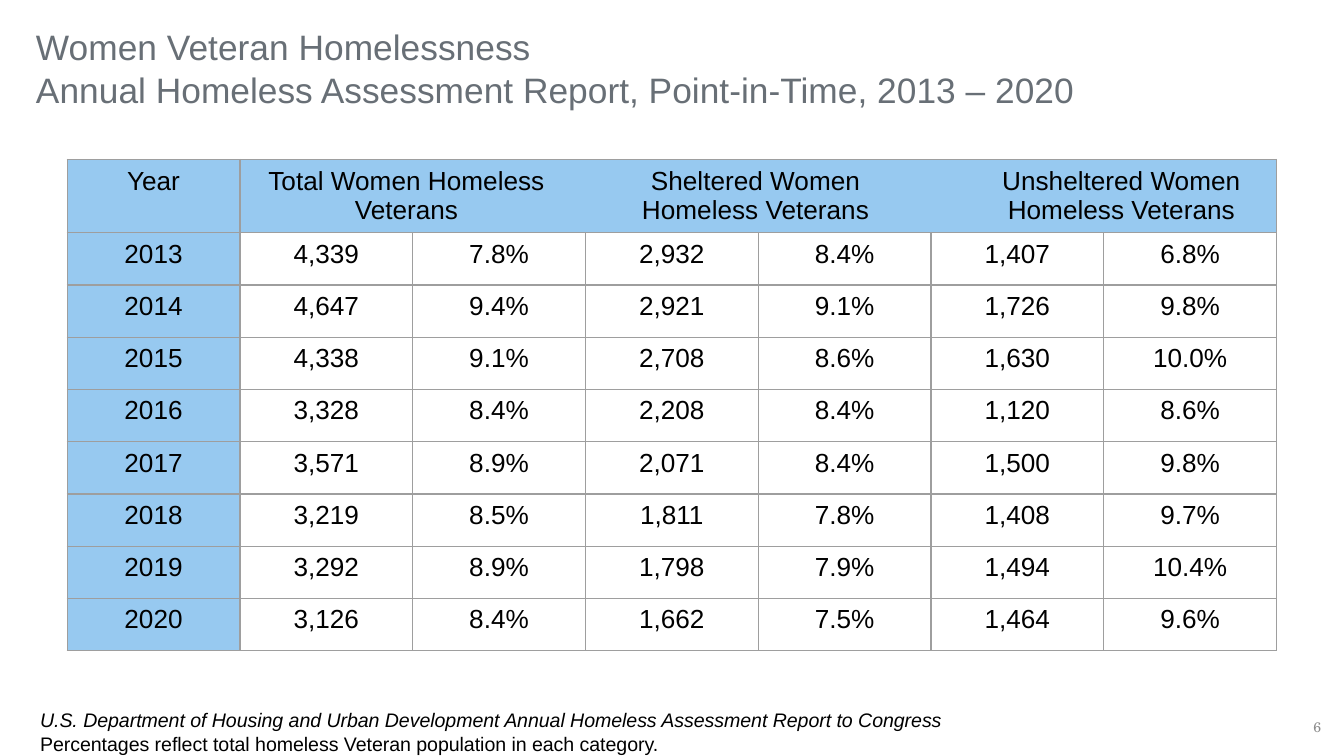
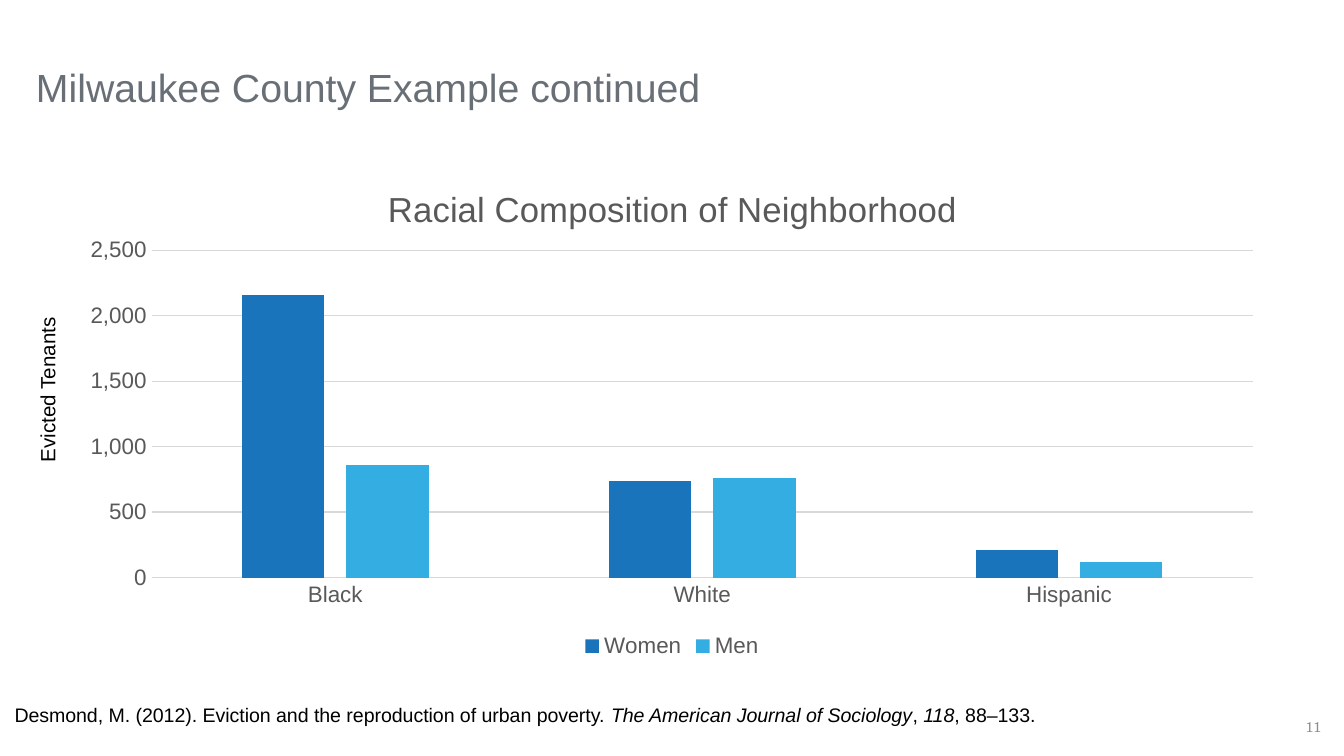
"""Build two slides on women veteran homelessness and neighborhood evictions."""
import dataclasses
import typing

import lxml.etree
import pptx
import pptx.chart.data
import pptx.dml.color
import pptx.enum.chart
import pptx.enum.text
import pptx.oxml.ns
import pptx.slide
import pptx.util

Pt = pptx.util.Pt
qn = pptx.oxml.ns.qn
Align = pptx.enum.text.PP_ALIGN
Anchor = pptx.enum.text.MSO_ANCHOR


@dataclasses.dataclass(frozen=True)
class Theme:
    sans: str = "Arial"
    serif: str = "TeX Gyre Schola"
    ink: str = "000000"
    heading: str = "686F76"
    page: str = "8C8C8C"
    header_fill: str = "97C9F0"
    border: str = "9E9E9E"
    chart_text: str = "595959"
    grid: str = "D9D9D9"
    women: str = "1A74BB"
    men: str = "33ADE2"
    line_width: float = 0.75
    table_size: float = 14
    chart_title_size: float = 18.6
    chart_size: float = 12
    axis_title_size: float = 11
    note_size: float = 10.5
    page_size: float = 7.5


THEME = Theme()


class Box(typing.NamedTuple):
    left: float
    top: float
    width: float
    height: float


class Style(typing.NamedTuple):
    size: float
    color: str = THEME.ink
    face: str = THEME.sans
    align: Align = Align.LEFT
    anchor: Anchor = Anchor.TOP


class Span(typing.NamedTuple):
    text: str
    italic: bool = False


class Series(typing.NamedTuple):
    name: str
    values: tuple[int, ...]
    color: str


Line = tuple[Span, ...]

CONTENT = Box(36, 85.5, 648, 270)
PAGE_NUMBER = Box(684.7, 378.7, 30.2, 21.6)
NOTE_STYLE = Style(THEME.note_size)
CELL_STYLE = Style(THEME.table_size, align=Align.CENTER)

HEADER_ROW = 38.2
YEAR_ROW = 28
HEADER_STOPS = (82, 269, 465)
HEADER_LINES = (
    ("Total Women Homeless", "Sheltered Women", "Unsheltered Women"),
    ("Veterans", "Homeless Veterans", "Homeless Veterans"),
)
YEARS = (
    ("2013", "4,339", "7.8%", "2,932", "8.4%", "1,407", "6.8%"),
    ("2014", "4,647", "9.4%", "2,921", "9.1%", "1,726", "9.8%"),
    ("2015", "4,338", "9.1%", "2,708", "8.6%", "1,630", "10.0%"),
    ("2016", "3,328", "8.4%", "2,208", "8.4%", "1,120", "8.6%"),
    ("2017", "3,571", "8.9%", "2,071", "8.4%", "1,500", "9.8%"),
    ("2018", "3,219", "8.5%", "1,811", "7.8%", "1,408", "9.7%"),
    ("2019", "3,292", "8.9%", "1,798", "7.9%", "1,494", "10.4%"),
    ("2020", "3,126", "8.4%", "1,662", "7.5%", "1,464", "9.6%"),
)
NEIGHBORHOODS = ("Black", "White", "Hispanic")
TENANTS = (
    Series("Women", (2160, 740, 210), THEME.women),
    Series("Men", (860, 760, 120), THEME.men),
)


def rgb(color: str) -> pptx.dml.color.RGBColor:
    """Turn a hex string into a colour."""
    return pptx.dml.color.RGBColor.from_string(color)


def set_font(font: typing.Any, size: float, color: str, face: str = THEME.sans) -> None:
    """Give a font its size, colour and face."""
    font.size, font.name = Pt(size), face
    font.color.rgb = rgb(color)


def style_paragraph(paragraph: typing.Any, style: Style) -> None:
    """Apply alignment and font to a whole paragraph."""
    paragraph.alignment = style.align
    set_font(paragraph.font, style.size, style.color, style.face)


def add_text(slide: pptx.slide.Slide, box: Box, lines: tuple[Line, ...],
             style: Style, rotation: float = 0) -> None:
    """Draw a text box with one paragraph per line."""
    shape = slide.shapes.add_textbox(*map(Pt, box))
    shape.rotation = rotation
    frame = shape.text_frame
    frame.word_wrap = True
    frame.vertical_anchor = style.anchor
    for index, line in enumerate(lines):
        paragraph = frame.add_paragraph() if index else frame.paragraphs[0]
        style_paragraph(paragraph, style)
        uniform = len({span.italic for span in line}) == 1
        if uniform:
            paragraph.font.italic = line[0].italic
        for span in line:
            run = paragraph.add_run()
            run.text = span.text
            if not uniform:
                run.font.italic = span.italic


def add_page(deck: typing.Any, title: tuple[str, ...], title_size: float,
             number: int) -> pptx.slide.Slide:
    """Add a blank slide with its title and page number."""
    slide = deck.slides.add_slide(deck.slide_layouts[6])
    frame = slide.shapes.add_textbox(*map(Pt, (12.2, 4.3, 589, 58.3))).text_frame
    frame.word_wrap = True
    frame.vertical_anchor = Anchor.BOTTOM
    heading = frame.paragraphs[0]
    style_paragraph(heading, Style(title_size, THEME.heading))
    for index, text in enumerate(title):
        if index:
            heading.add_line_break()
        heading.add_run().text = text
    page_style = Style(THEME.page_size, THEME.page, THEME.serif, Align.RIGHT, Anchor.MIDDLE)
    add_text(slide, PAGE_NUMBER, ((Span(str(number)),),), page_style)
    return slide


def style_cell(cell: typing.Any, fill: str | None) -> None:
    """Draw the borders of a cell, then its fill."""
    properties = cell._tc.get_or_add_tcPr()
    for side in ("a:lnL", "a:lnR", "a:lnT", "a:lnB"):
        line = lxml.etree.SubElement(properties, qn(side), w=str(Pt(THEME.line_width)))
        solid = lxml.etree.SubElement(line, qn("a:solidFill"))
        lxml.etree.SubElement(solid, qn("a:srgbClr"), val=THEME.border)
    if fill:
        cell.fill.solid()
        cell.fill.fore_color.rgb = rgb(fill)
    else:
        cell.fill.background()


def fill_group_header(cell: typing.Any) -> None:
    """Centre the three group names on tab stops in the merged header."""
    frame = cell.text_frame
    for index, names in enumerate(HEADER_LINES):
        paragraph = frame.add_paragraph() if index else frame.paragraphs[0]
        stops = lxml.etree.SubElement(paragraph._p.get_or_add_pPr(), qn("a:tabLst"))
        for stop in HEADER_STOPS:
            lxml.etree.SubElement(stops, qn("a:tab"), pos=str(Pt(stop)), algn="ctr")
        paragraph.add_run().text = "".join(f"\t{name}" for name in names)
        style_paragraph(paragraph, CELL_STYLE._replace(align=Align.LEFT))


def add_homeless_table(slide: pptx.slide.Slide) -> None:
    """Draw the yearly counts and shares."""
    columns = len(YEARS[0])
    height = HEADER_ROW + YEAR_ROW * len(YEARS)
    table = slide.shapes.add_table(
        len(YEARS) + 1, columns, *map(Pt, CONTENT._replace(height=height))).table
    table.first_row = table.horz_banding = False
    for column in table.columns:
        column.width = Pt(CONTENT.width / columns)
    rows = (("Year",) + ("",) * (columns - 1),) + YEARS
    for row_index, texts in enumerate(rows):
        table.rows[row_index].height = Pt(YEAR_ROW if row_index else HEADER_ROW)
        for column_index, text in enumerate(texts):
            cell = table.cell(row_index, column_index)
            is_header = row_index == 0 or column_index == 0
            style_cell(cell, THEME.header_fill if is_header else None)
            if row_index == 0:
                cell.margin_bottom = Pt(2)
            if text:
                cell.text = text
                style_paragraph(cell.text_frame.paragraphs[0], CELL_STYLE)
    groups = table.cell(0, 1)
    groups.merge(table.cell(0, columns - 1))
    fill_group_header(groups)


def place(part: typing.Any, index: int, **fractions: float) -> None:
    """Fix a chart part at fractions of the chart area."""
    for automatic in part.findall(qn("c:layout")):
        part.remove(automatic)
    layout = lxml.etree.Element(qn("c:layout"))
    manual = lxml.etree.SubElement(layout, qn("c:manualLayout"))
    if "w" in fractions:
        lxml.etree.SubElement(manual, qn("c:layoutTarget"), val="inner")
    for mode in ("c:xMode", "c:yMode"):
        lxml.etree.SubElement(manual, qn(mode), val="edge")
    for key, value in fractions.items():
        lxml.etree.SubElement(manual, qn(f"c:{key}"), val=str(value))
    part.insert(index, layout)


def add_tenant_chart(slide: pptx.slide.Slide) -> None:
    """Draw evicted tenants by neighborhood and sex."""
    data = pptx.chart.data.CategoryChartData(number_format="#,##0")
    data.categories = NEIGHBORHOODS
    for series in TENANTS:
        data.add_series(series.name, series.values)
    chart = slide.shapes.add_chart(
        pptx.enum.chart.XL_CHART_TYPE.COLUMN_CLUSTERED, *map(Pt, CONTENT), data).chart
    set_font(chart.font, THEME.chart_size, THEME.chart_text)

    chart.has_title = True
    chart.chart_title.text_frame.text = "Racial Composition of Neighborhood"
    heading = chart.chart_title.text_frame.paragraphs[0]
    set_font(heading.font, THEME.chart_title_size, THEME.chart_text)
    heading.font.bold = False
    place(chart.chart_title._element, 1, x=0.26, y=0.04)
    place(chart._chartSpace.chart.plotArea, 0, x=0.07, y=0.18, w=0.91, h=0.65)

    chart.has_legend = True
    chart.legend.position = pptx.enum.chart.XL_LEGEND_POSITION.BOTTOM
    chart.legend.include_in_layout = False
    set_font(chart.legend.font, THEME.chart_size, THEME.chart_text)

    plot = chart.plots[0]
    plot.gap_width, plot.overlap, plot.vary_by_categories = 219, -27, False
    for drawn, series in zip(plot.series, TENANTS):
        drawn.format.fill.solid()
        drawn.format.fill.fore_color.rgb = rgb(series.color)

    counts = chart.value_axis
    counts.minimum_scale, counts.maximum_scale, counts.major_unit = 0, 2500, 500
    counts.tick_labels.number_format = "#,##0"
    counts.tick_labels.number_format_is_linked = False
    for axis in (chart.category_axis, counts):
        axis.major_tick_mark = pptx.enum.chart.XL_TICK_MARK.NONE
        set_font(axis.tick_labels.font, THEME.chart_size, THEME.chart_text)
    counts.format.line.fill.background()
    for line in (counts.major_gridlines.format.line, chart.category_axis.format.line):
        line.color.rgb = rgb(THEME.grid)
        line.width = Pt(THEME.line_width)


def main() -> None:
    """Build and save the deck."""
    deck = pptx.Presentation()
    deck.slide_width, deck.slide_height = Pt(720), Pt(405)

    homelessness = add_page(deck, (
        "Women Veteran Homelessness",
        "Annual Homeless Assessment Report, Point-in-Time, 2013 – 2020"), 18.9, 6)
    add_homeless_table(homelessness)
    add_text(homelessness, Box(14.4, 375.8, 519, 32.4), (
        (Span("U.S. Department of Housing and Urban Development "
              "Annual Homeless Assessment Report to Congress", True),),
        (Span("Percentages reflect total homeless Veteran population in each category."),),
    ), NOTE_STYLE)

    evictions = add_page(deck, ("Milwaukee County Example continued",), 21, 11)
    add_tenant_chart(evictions)
    add_text(evictions, Box(-26.6, 192.2, 104.4, 20.9), ((Span("Evicted Tenants"),),),
             Style(THEME.axis_title_size), 270)
    add_text(evictions, Box(0.7, 373, 566, 32.4), ((
        Span("Desmond, M. (2012). Eviction and the reproduction of urban poverty. "),
        Span("The American Journal of Sociology", True), Span(", "),
        Span("118", True), Span(", 88–133.")),), NOTE_STYLE)

    deck.save("out.pptx")


if __name__ == "__main__":
    main()
